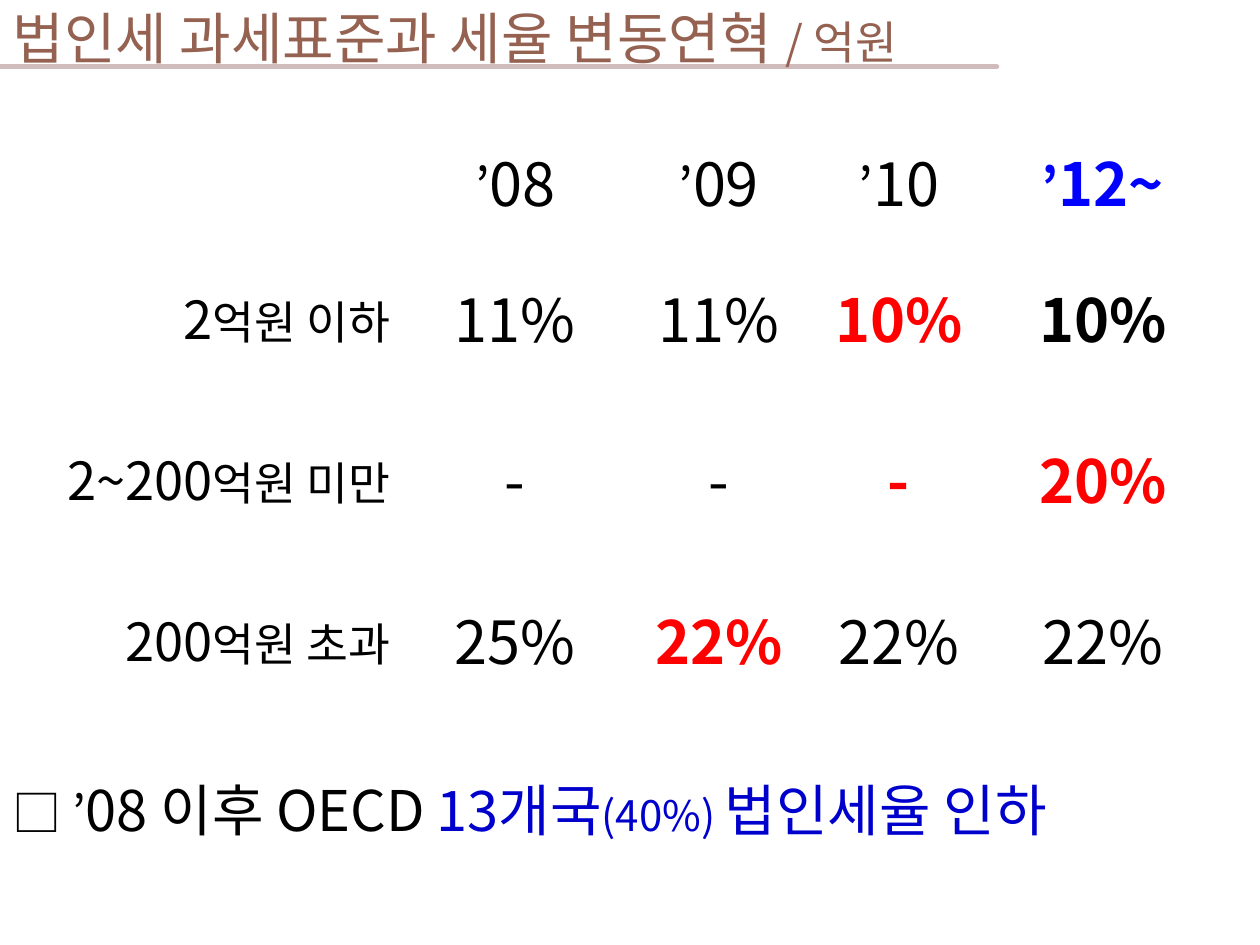
import pptx
import pptx.dml.color
import pptx.enum.shapes
import pptx.enum.text
import pptx.oxml
import pptx.oxml.ns
import pptx.util
from pptx.util import Inches

ALIGN = pptx.enum.text.PP_ALIGN
ANCHOR = pptx.enum.text.MSO_ANCHOR
BLACK, RED, BLUE = "000000", "FF0000", "0000FF"
NAVY, BROWN, ROSE = "0000CC", "956251", "D0BCBC"

COLUMN_WIDTHS = [3.06, 1.84, 1.39, 1.47, 1.77]
ROW_HEIGHTS = [0.88, 1.28, 1.28, 1.28]
YEARS = ["08", "09", "10", "12~"]
RATES = [
    ("2", "억원 이하", ["11%", "11%", "10%", "10%"]),
    ("2~200", "억원 미만", ["-", "-", "-", "20%"]),
    ("200", "억원 초과", ["25%", "22%", "22%", "22%"]),
]
EMPHASIS = {
    (0, 2): (RED, True),
    (0, 3): (BLACK, True),
    (1, 2): (RED, True),
    (1, 3): (RED, True),
    (2, 1): (RED, True),
}


def color(value):
    return pptx.dml.color.RGBColor.from_string(value)


class SlideBuilder:
    font_name = "Noto Sans CJK KR"

    def __init__(self, slide):
        self.slide = slide

    def add_runs(self, paragraph, runs):
        for text, size, shade, bold in runs:
            run = paragraph.add_run()
            run.text = text
            run.font.name = self.font_name
            run.font.size = pptx.util.Pt(size)
            run.font.bold = bold
            run.font.color.rgb = color(shade)
            east_asian = pptx.oxml.parse_xml(
                f'<a:ea {pptx.oxml.ns.nsdecls("a")} typeface="{self.font_name}"/>'
            )
            run.font._element.find(pptx.oxml.ns.qn("a:latin")).addnext(east_asian)

    def title(self, left, top, width, height, runs):
        shape = self.slide.shapes.title
        shape.left, shape.top = Inches(left), Inches(top)
        shape.width, shape.height = Inches(width), Inches(height)
        frame = shape.text_frame
        frame.auto_size = pptx.enum.text.MSO_AUTO_SIZE.NONE
        frame.vertical_anchor = ANCHOR.MIDDLE
        frame.paragraphs[0].alignment = ALIGN.LEFT
        self.add_runs(frame.paragraphs[0], runs)

    def rule(self, left, right, y, shade, weight):
        connector = self.slide.shapes.add_connector(
            pptx.enum.shapes.MSO_CONNECTOR.STRAIGHT,
            Inches(left), Inches(y), Inches(right), Inches(y),
        )
        connector.line.color.rgb = color(shade)
        connector.line.width = pptx.util.Pt(weight)
        properties = connector.element.spPr
        properties.find(pptx.oxml.ns.qn("a:ln")).set("cap", "rnd")
        properties.append(
            pptx.oxml.parse_xml(f'<a:effectLst {pptx.oxml.ns.nsdecls("a")}/>')
        )
        self.slide.shapes.title.element.addprevious(connector.element)

    def table(self, left, top, widths, heights):
        table = self.slide.shapes.add_table(
            len(heights), len(widths), Inches(left), Inches(top),
            Inches(sum(widths)), Inches(sum(heights)),
        ).table
        table.first_row = table.horz_banding = False
        for column, width in zip(table.columns, widths):
            column.width = Inches(width)
        for row, height in zip(table.rows, heights):
            row.height = Inches(height)
        for cell in table.iter_cells():
            cell.fill.background()
            cell.vertical_anchor = ANCHOR.MIDDLE
            cell.margin_left = cell.margin_right = Inches(0.07)
            cell.margin_top = cell.margin_bottom = Inches(0.02)
        return table

    def cell(self, table, row, column, alignment, runs):
        paragraph = table.cell(row, column).text_frame.paragraphs[0]
        paragraph.alignment = alignment
        self.add_runs(paragraph, runs)

    def note(self, left, top, width, height, runs):
        shape = self.slide.shapes.add_textbox(
            Inches(left), Inches(top), Inches(width), Inches(height)
        )
        frame = shape.text_frame
        frame.word_wrap = True
        frame.auto_size = pptx.enum.text.MSO_AUTO_SIZE.SHAPE_TO_FIT_TEXT
        paragraph = frame.paragraphs[0]
        paragraph.space_before = pptx.util.Pt(20)
        properties = paragraph._p.get_or_add_pPr()
        properties.set("marL", str(Inches(0.38)))
        properties.set("indent", str(Inches(-0.38)))
        self.add_runs(paragraph, runs)


def main():
    presentation = pptx.Presentation()
    presentation.slide_width = Inches(10)
    presentation.slide_height = Inches(7.5)
    title_only = presentation.slide_layouts[5]
    builder = SlideBuilder(presentation.slides.add_slide(title_only))

    builder.title(0, 0.02, 9.2, 0.52, [
        ("법인세 과세표준과 세율 변동연혁", 32, BROWN, False),
        (" ", 34, BROWN, False),
        ("/ 억원", 26, BROWN, False),
    ])
    builder.rule(0, 7.91, 0.53, ROSE, 3)

    table = builder.table(0.11, 0.99, COLUMN_WIDTHS, ROW_HEIGHTS)
    for column, year in enumerate(YEARS, 1):
        latest = column == len(YEARS)
        shade = BLUE if latest else BLACK
        builder.cell(table, 0, column, ALIGN.CENTER, [
            ("’", 30, shade, latest), (year, 34, shade, latest),
        ])
    for row, (amount, unit, rates) in enumerate(RATES):
        builder.cell(table, row + 1, 0, ALIGN.RIGHT, [
            (amount, 30, BLACK, False), (unit, 26, BLACK, False),
        ])
        for column, rate in enumerate(rates):
            shade, bold = EMPHASIS.get((row, column), (BLACK, False))
            builder.cell(table, row + 1, column + 1, ALIGN.CENTER,
                         [(rate, 34, shade, bold)])

    builder.note(0, 6.11, 10, 0.64, [
        ("□ ’", 28, BLACK, False),
        ("08 이후 OECD", 32, BLACK, False),
        (" ", 28, BLACK, False),
        ("13개국", 32, NAVY, False),
        ("(40%) ", 24, NAVY, False),
        ("법인세율 인하", 32, NAVY, False),
    ])
    presentation.save("out.pptx")


if __name__ == "__main__":
    main()
